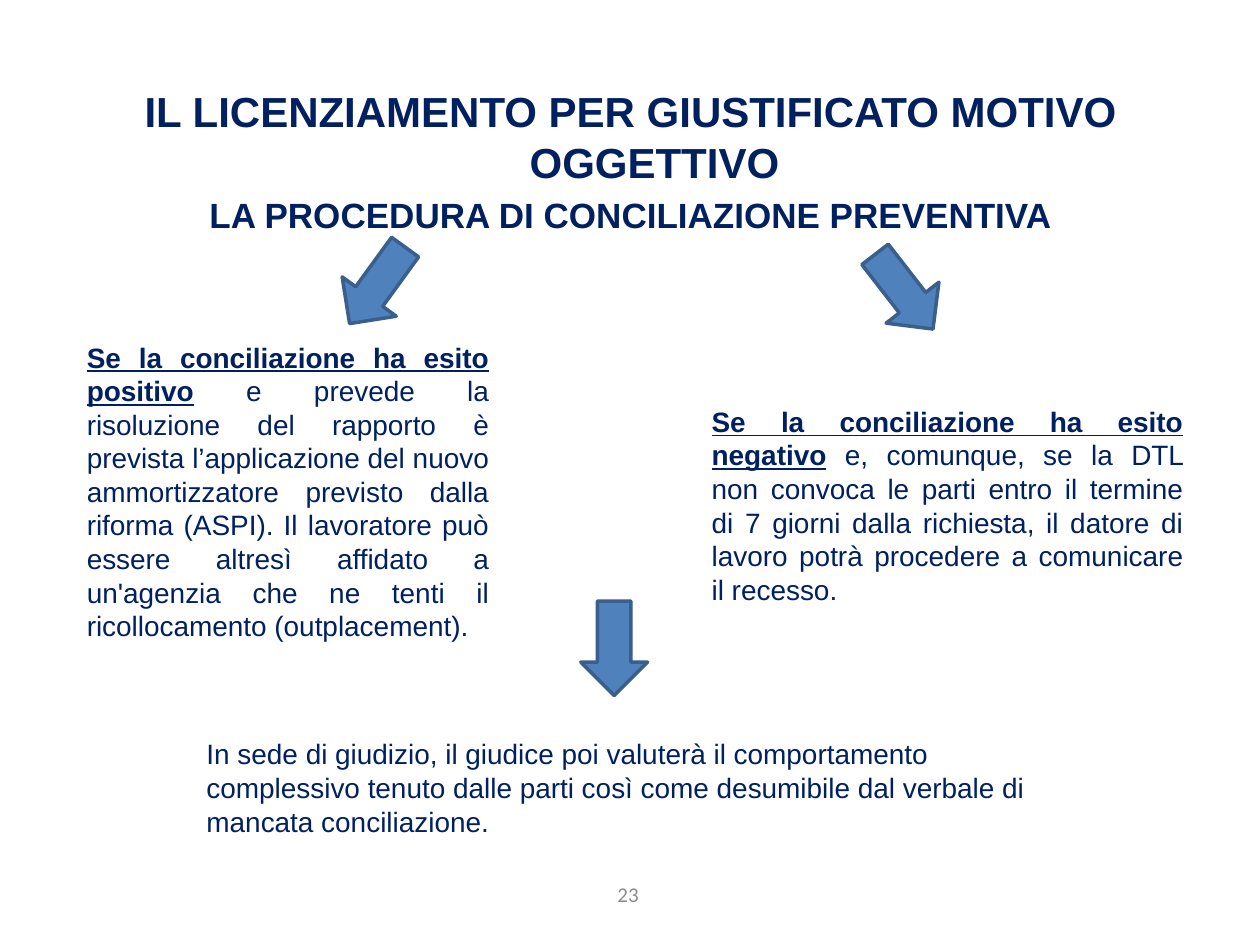
from pptx import Presentation
from pptx.dml.color import RGBColor
from pptx.enum.shapes import MSO_SHAPE
from pptx.enum.text import MSO_ANCHOR, MSO_AUTO_SIZE, PP_ALIGN
from pptx.util import Inches, Pt

TITLE_ONLY = 5
DOWN_ARROW = MSO_SHAPE.DOWN_ARROW
TOP, MIDDLE = MSO_ANCHOR.TOP, MSO_ANCHOR.MIDDLE
LEFT, CENTER, JUSTIFY = PP_ALIGN.LEFT, PP_ALIGN.CENTER, PP_ALIGN.JUSTIFY
NO_AUTOFIT = MSO_AUTO_SIZE.NONE
NAVY, BLUE, DARK_BLUE, GRAY = "002060", "4F81BD", "3A5F8C", "8C8C8C"
WIDTH, HEIGHT = Inches(10), Inches(7.5)
ARROW_WIDTH, ARROW_HEIGHT = Inches(0.53), Inches(0.75)
HANGING = Inches(0.38)


def color(value):
    """Turn a hex string into a colour."""
    return RGBColor.from_string(value)


def add_run(paragraph, text, size, bold=False, underline=False, ink=NAVY, face="Arial"):
    """Append one formatted run to a paragraph."""
    run = paragraph.add_run()
    run.text = text
    font = run.font
    font.name, font.size = face, Pt(size)
    font.bold, font.underline = bold, underline
    font.color.rgb = color(ink)


def set_heading(slide, lines):
    """Fill the title placeholder with centred lines that hang from the indent."""
    heading = slide.shapes.title
    heading.left, heading.top = Inches(0.28), Inches(0.63)
    heading.width, heading.height = Inches(9.45), Inches(1.25)
    frame = heading.text_frame
    frame.auto_size, frame.vertical_anchor = NO_AUTOFIT, TOP
    for index, (text, size) in enumerate(lines):
        paragraph = frame.add_paragraph() if index else frame.paragraphs[0]
        paragraph.alignment = CENTER
        paragraph.space_before = Pt(0.2 * size if index else 0)
        properties = paragraph._p.get_or_add_pPr()
        properties.set("marL", str(HANGING))
        properties.set("indent", str(-HANGING))
        add_run(paragraph, text, size, bold=True)


def add_passage(slide, box, align, anchor=TOP):
    """Add a wrapping text box and return its paragraph."""
    frame = slide.shapes.add_textbox(*map(Inches, box)).text_frame
    frame.word_wrap, frame.vertical_anchor = True, anchor
    paragraph = frame.paragraphs[0]
    paragraph.alignment = align
    return paragraph


def add_outcome(slide, box, condition, consequence):
    """Add a justified passage that opens with an underlined condition."""
    outcome = add_passage(slide, box, JUSTIFY)
    add_run(outcome, condition, 16, bold=True, underline=True)
    add_run(outcome, consequence, 16)


def add_arrow(slide, left, top, rotation=0):
    """Add a block arrow that points down before rotation."""
    arrow = slide.shapes.add_shape(
        DOWN_ARROW, Inches(left), Inches(top), ARROW_WIDTH, ARROW_HEIGHT)
    arrow.rotation = rotation
    arrow.shadow.inherit = False
    arrow.fill.solid()
    arrow.fill.fore_color.rgb = color(BLUE)
    arrow.line.color.rgb = color(DARK_BLUE)
    arrow.line.width = Pt(2)


def main():
    """Build the slide on the conciliation procedure."""
    deck = Presentation()
    deck.slide_width, deck.slide_height = WIDTH, HEIGHT
    slide = deck.slides.add_slide(deck.slide_layouts[TITLE_ONLY])
    set_heading(slide, [
        ("IL LICENZIAMENTO PER GIUSTIFICATO MOTIVO OGGETTIVO", 24),
        ("LA PROCEDURA DI CONCILIAZIONE PREVENTIVA", 20),
    ])
    add_outcome(
        slide, (5.55, 3.16, 3.94, 1.71),
        "Se la conciliazione ha esito negativo",
        " e, comunque, se la DTL non convoca le parti entro il termine di 7 giorni "
        "dalla richiesta, il datore di lavoro potrà procedere a comunicare il recesso.")
    add_outcome(
        slide, (0.59, 2.65, 3.39, 2.77),
        "Se la conciliazione ha esito positivo",
        " e prevede la risoluzione del rapporto è prevista l’applicazione del nuovo "
        "ammortizzatore previsto dalla riforma (ASPI). Il lavoratore può essere altresì "
        "affidato a un'agenzia che ne tenti il ricollocamento (outplacement).")
    for left, top, rotation in ((6.91, 1.94, 322.2), (2.73, 1.89, 36), (4.61, 4.77, 0)):
        add_arrow(slide, left, top, rotation)
    judgment = add_passage(slide, (1.54, 5.8, 6.69, 0.91), LEFT)
    add_run(
        judgment,
        "In sede di giudizio, il giudice poi valuterà il comportamento complessivo "
        "tenuto dalle parti così come desumibile dal verbale di mancata conciliazione.", 16)
    page_number = add_passage(slide, (3.82, 6.9, 2.33, 0.4), CENTER, MIDDLE)
    add_run(page_number, "23", 12, ink=GRAY, face="Calibri")
    deck.save("out.pptx")


if __name__ == "__main__":
    main()
